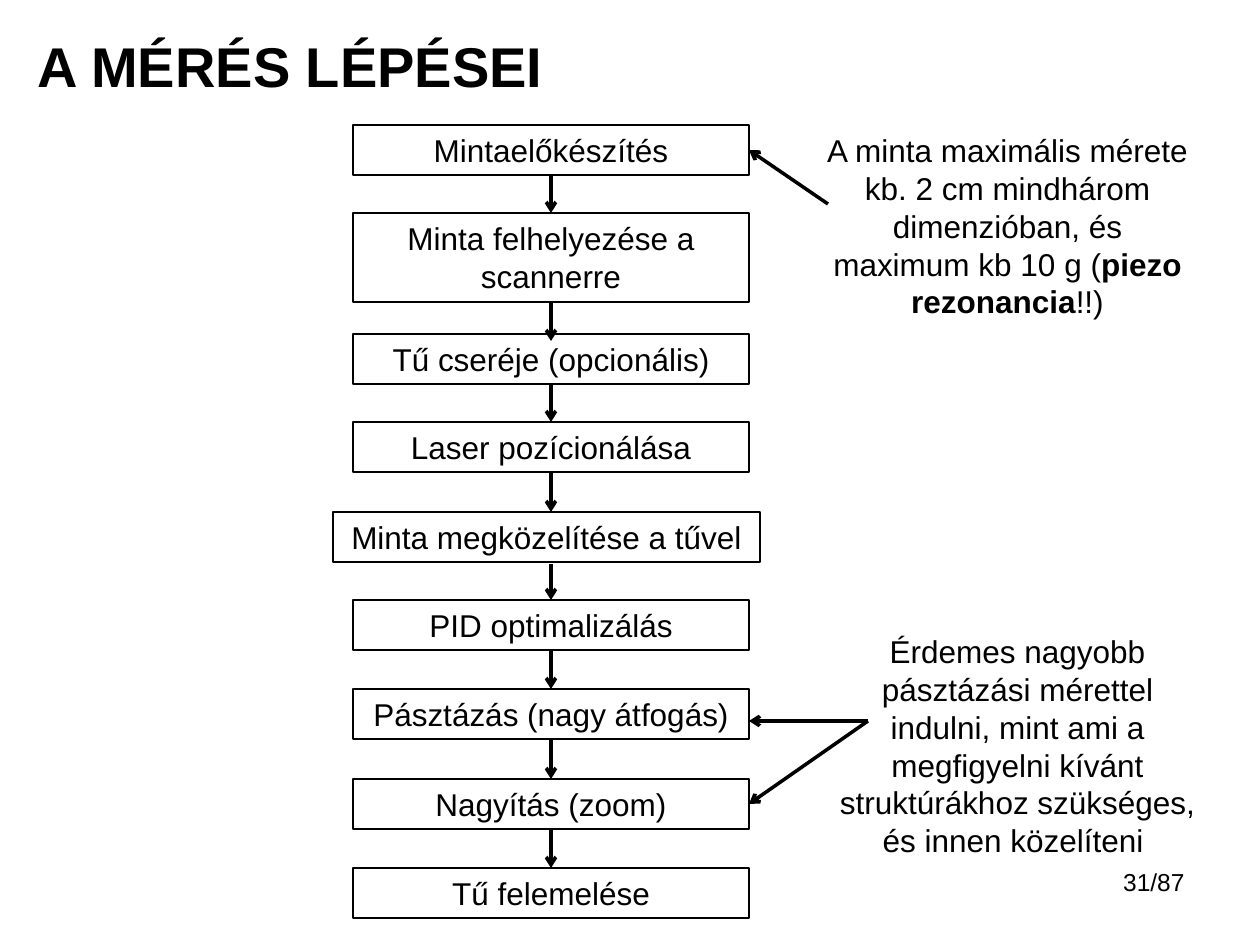
from lxml.etree import SubElement
from pptx import Presentation
from pptx.dml.color import RGBColor
from pptx.enum.shapes import MSO_CONNECTOR as CONN, MSO_SHAPE as SHAPE
from pptx.enum.text import MSO_ANCHOR as ANCHOR, MSO_AUTO_SIZE as AUTO, PP_ALIGN as ALIGN
from pptx.oxml.ns import qn
from pptx.util import Pt

PX = 914400 / 126
COLORS = {"ink": "000000", "paper": "FFFFFF"}
INK = RGBColor.from_string(COLORS["ink"])

prs = Presentation()
prs.slide_width, prs.slide_height = round(1260 * PX), round(945 * PX)
s = prs.slides.add_slide(prs.slide_layouts[6])
s.background.fill.solid()
s.background.fill.fore_color.rgb = RGBColor.from_string(COLORS["paper"])


def write(sp, runs, size=18, align=ALIGN.CENTER, anchor=ANCHOR.TOP, auto=AUTO.NONE):
    tf = sp.text_frame
    tf.word_wrap = True
    tf.auto_size = auto
    tf.vertical_anchor = anchor
    p = tf.paragraphs[0]
    p.alignment = align
    for text, bold in runs:
        r = p.add_run()
        r.text = text
        r.font.name = "Arial"
        r.font.size = Pt(size)
        r.font.bold = bold
        r.font.color.rgb = INK


def arrow(x1, y1, x2, y2, begin=None, end=None):
    c = s.shapes.add_connector(CONN.STRAIGHT, *[round(v * PX) for v in (x1, y1, x2, y2)])
    if begin:
        c.begin_connect(*begin)
    if end:
        c.end_connect(*end)
    c.line.color.rgb = INK
    c.line.width = Pt(2)
    SubElement(c.line._get_or_add_ln(), qn("a:tailEnd"), type="arrow")
    SubElement(c._element.spPr, qn("a:effectLst"))


LEFT, WIDTH, ROW = 353, 396, 50
MID, RIGHT = LEFT + WIDTH // 2, LEFT + WIDTH
steps = [
    ("Mintaelőkészítés", LEFT, 125, WIDTH, ROW),
    ("Minta felhelyezése a scannerre", LEFT, 213, WIDTH, 89),
    ("Tű cseréje (opcionális)", LEFT, 334, WIDTH, ROW),
    ("Laser pozícionálása", LEFT, 422, WIDTH, ROW),
    ("Minta megközelítése a tűvel", 333, 512, 427, ROW),
    ("PID optimalizálás", LEFT, 600, WIDTH, ROW),
    ("Pásztázás (nagy átfogás)", LEFT, 689, WIDTH, ROW),
    ("Nagyítás (zoom)", LEFT, 779, WIDTH, ROW),
    ("Tű felemelése", LEFT, 868, WIDTH, ROW),
]
boxes = []
for text, *at in steps:
    sp = s.shapes.add_shape(SHAPE.RECTANGLE, *[round(v * PX) for v in at])
    sp.shadow.inherit = False
    sp.fill.background()
    sp.line.color.rgb = INK
    sp.line.width = Pt(0.75)
    write(sp, [(text, False)], auto=AUTO.SHAPE_TO_FIT_TEXT)
    boxes.append(sp)

for i, (upper, lower) in enumerate(zip(steps, steps[1:])):
    start, stop = upper[2] + upper[4] + 2, lower[2]
    begin = (boxes[i], 2) if upper[1] == LEFT else None
    end = (boxes[i + 1], 0) if lower[1] == LEFT else None
    if i == 1:
        stop, end = stop + 7, None
    arrow(MID, start, MID, stop, begin, end)

arrow(828, 204, RIGHT, 150, end=(boxes[0], 3))
arrow(868, 721, RIGHT, 721)
arrow(868, 721, RIGHT, 804, end=(boxes[7], 3))

texts = [
    ((25, -24, 1134, 178), [("A MÉRÉS LÉPÉSEI", True)],
     dict(size=32, align=ALIGN.LEFT, anchor=ANCHOR.MIDDLE)),
    ((809, 125, 397, 204),
     [("A minta maximális mérete kb. 2 cm mindhárom dimenzióban, és maximum kb 10 g (", False),
      ("piezo rezonancia", True), ("!!)", False)],
     dict(auto=AUTO.SHAPE_TO_FIT_TEXT)),
    ((819, 626, 397, 242),
     [("Érdemes nagyobb pásztázási mérettel indulni, mint ami a megfigyelni kívánt "
       "struktúrákhoz szükséges, és innen közelíteni ", False)],
     dict(auto=AUTO.SHAPE_TO_FIT_TEXT)),
    ((903, 861, 294, 66), [("31/87", False)], dict(size=14, align=ALIGN.RIGHT)),
]
for at, runs, style in texts:
    write(s.shapes.add_textbox(*[round(v * PX) for v in at]), runs, **style)

prs.save("out.pptx")
